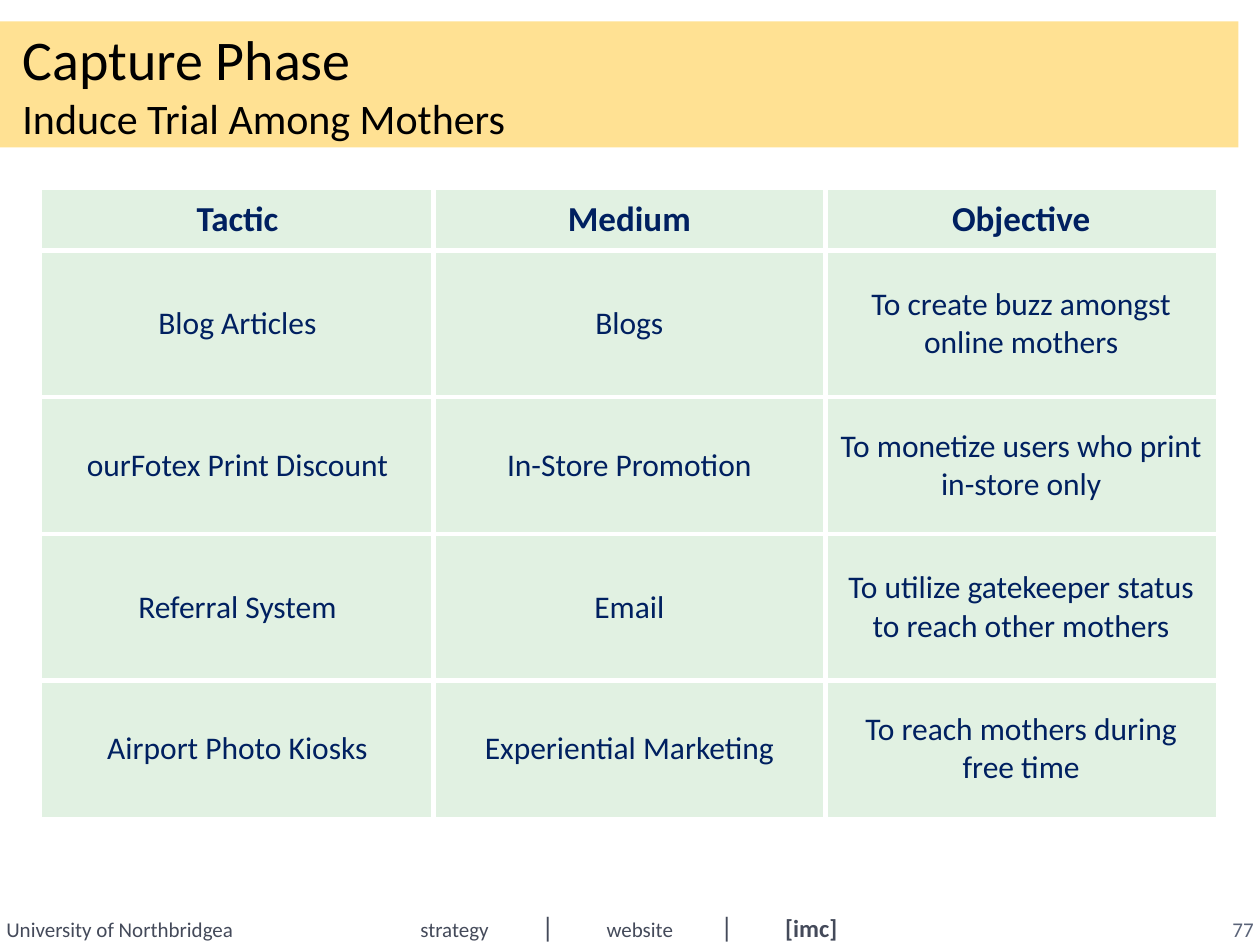
import pptx
import pptx.dml.color
import pptx.enum.shapes
import pptx.enum.text
import pptx.oxml
import pptx.oxml.ns
import pptx.util

Inches = pptx.util.Inches
Pt = pptx.util.Pt
RGBColor = pptx.dml.color.RGBColor
ALIGN = pptx.enum.text.PP_ALIGN
MIDDLE = pptx.enum.text.MSO_ANCHOR.MIDDLE

FONT = "Calibri"
BLACK = RGBColor(0x00, 0x00, 0x00)
WHITE = RGBColor(0xFF, 0xFF, 0xFF)
BAND = RGBColor(0xFF, 0xE1, 0x93)
MINT = RGBColor(0xE1, 0xF1, 0xE2)
NAVY = RGBColor(0x00, 0x20, 0x60)
SLATE = RGBColor(0x44, 0x4A, 0x5A)
GREY = RGBColor(0x5A, 0x63, 0x78)

ROWS = [
    ("Tactic", "Medium", "Objective"),
    ("Blog Articles", "Blogs", "To create buzz amongst online mothers"),
    ("ourFotex Print Discount", "In-Store Promotion",
     "To monetize users who print in-store only"),
    ("Referral System", "Email",
     "To utilize gatekeeper status to reach other mothers"),
    ("Airport Photo Kiosks", "Experiential Marketing",
     "To reach mothers during free time"),
]
ROW_HEIGHTS = [0.49, 1.16, 1.09, 1.16, 1.09]

# Footer entries: text, size, bold, centre measured from the slide's left edge
FOOTER = [
    ("strategy", 12, False, 3.61),
    ("|", 16, False, 4.35),
    ("website", 12, False, 5.08),
    ("|", 16, False, 5.77),
    ("[imc]", 14, True, 6.44),
]


def add_run(p, text, size, color, bold=False):
    r = p.add_run()
    r.text = text
    r.font.name = FONT
    r.font.size = Pt(size)
    r.font.bold = bold
    r.font.color.rgb = color


def add_text_box(slide, box, align=ALIGN.LEFT, inset=None):
    """Add an empty text box and return its first paragraph."""
    tf = slide.shapes.add_textbox(*map(Inches, box)).text_frame
    tf.word_wrap = True
    tf.vertical_anchor = MIDDLE
    if inset is not None:
        tf.margin_left = tf.margin_right = Inches(inset)
        tf.margin_top = tf.margin_bottom = Inches(inset)
    p = tf.paragraphs[0]
    p.alignment = align
    return p


def set_borders(cell, widths):
    tcPr = cell._tc.get_or_add_tcPr()
    for i, (side, width) in enumerate(widths.items()):
        tcPr.insert(i, pptx.oxml.parse_xml(
            f'<a:ln{side} {pptx.oxml.ns.nsdecls("a")} w="{Pt(width)}">'
            f'<a:solidFill><a:srgbClr val="{WHITE}"/></a:solidFill></a:ln{side}>'))


def add_header(slide, band_box, title_box):
    # Coloured band
    sp = slide.shapes.add_shape(
        pptx.enum.shapes.MSO_SHAPE.RECTANGLE, *map(Inches, band_box))
    sp.shadow.inherit = False
    sp.fill.solid()
    sp.fill.fore_color.rgb = BAND
    sp.line.fill.background()

    # Title and subtitle
    p = add_text_box(slide, title_box)
    add_run(p, "Capture Phase", 32, BLACK)
    p.add_line_break()
    add_run(p, "Induce Trial Among Mothers", 24, BLACK)


def add_tactics_table(slide, box):
    n_rows, n_cols = len(ROWS), len(ROWS[0])
    frame = slide.shapes.add_table(n_rows, n_cols, *map(Inches, box))
    table = frame.table
    for col in table.columns:
        col.width = Inches(box[2] / n_cols)
    for row, height in zip(table.rows, ROW_HEIGHTS):
        row.height = Inches(height)

    for i, texts in enumerate(ROWS):
        for j, text in enumerate(texts):
            cell = table.cell(i, j)
            cell.fill.solid()
            cell.fill.fore_color.rgb = MINT
            cell.vertical_anchor = MIDDLE
            cell.margin_left = cell.margin_right = Inches(0.11)
            p = cell.text_frame.paragraphs[0]
            p.alignment = ALIGN.CENTER
            header = i == 0
            add_run(p, text, 20 if header else 18, NAVY, header)
            # Thin outer edges, thick inner ones
            set_borders(cell, {
                "L": 1 if j == 0 else 3,
                "R": 1 if j == n_cols - 1 else 3,
                "T": 1 if i == 0 else 3,
                "B": 1 if i == n_rows - 1 else 3,
            })


def add_footer(slide, box):
    left, top, width, height = box
    # Institution
    p = add_text_box(slide, (left, top + 0.06, 4.58, 0.25), inset=0.05)
    add_run(p, "University of Northbridgea", 12, SLATE)

    # Section names, centred on tab stops
    p = add_text_box(slide, box)
    inset = 0.1
    tabs = "".join(f'<a:tab pos="{Inches(x - left - inset)}" algn="ctr"/>'
                   for *_, x in FOOTER)
    p._p.get_or_add_pPr().append(pptx.oxml.parse_xml(
        f'<a:tabLst {pptx.oxml.ns.nsdecls("a")}>{tabs}</a:tabLst>'))
    for text, size, bold, _ in FOOTER:
        add_run(p, "\t" + text, size, SLATE, bold)

    # Slide number
    p = add_text_box(slide, (left + width - 0.92, top + 0.06, 0.92, 0.25),
                     ALIGN.RIGHT, 0.05)
    add_run(p, "77", 12, GREY)


def main():
    prs = pptx.Presentation()
    prs.slide_width, prs.slide_height = Inches(10), Inches(7.5)
    slide = prs.slides.add_slide(prs.slide_layouts[6])
    add_header(slide, (0, 0.17, 9.83, 1), (0.08, 0.08, 9.83, 1.17))
    add_tactics_table(slide, (0.33, 1.5, 9.33, sum(ROW_HEIGHTS)))
    add_footer(slide, (0, 7.19, 10, 0.33))
    prs.save("out.pptx")


if __name__ == "__main__":
    main()
